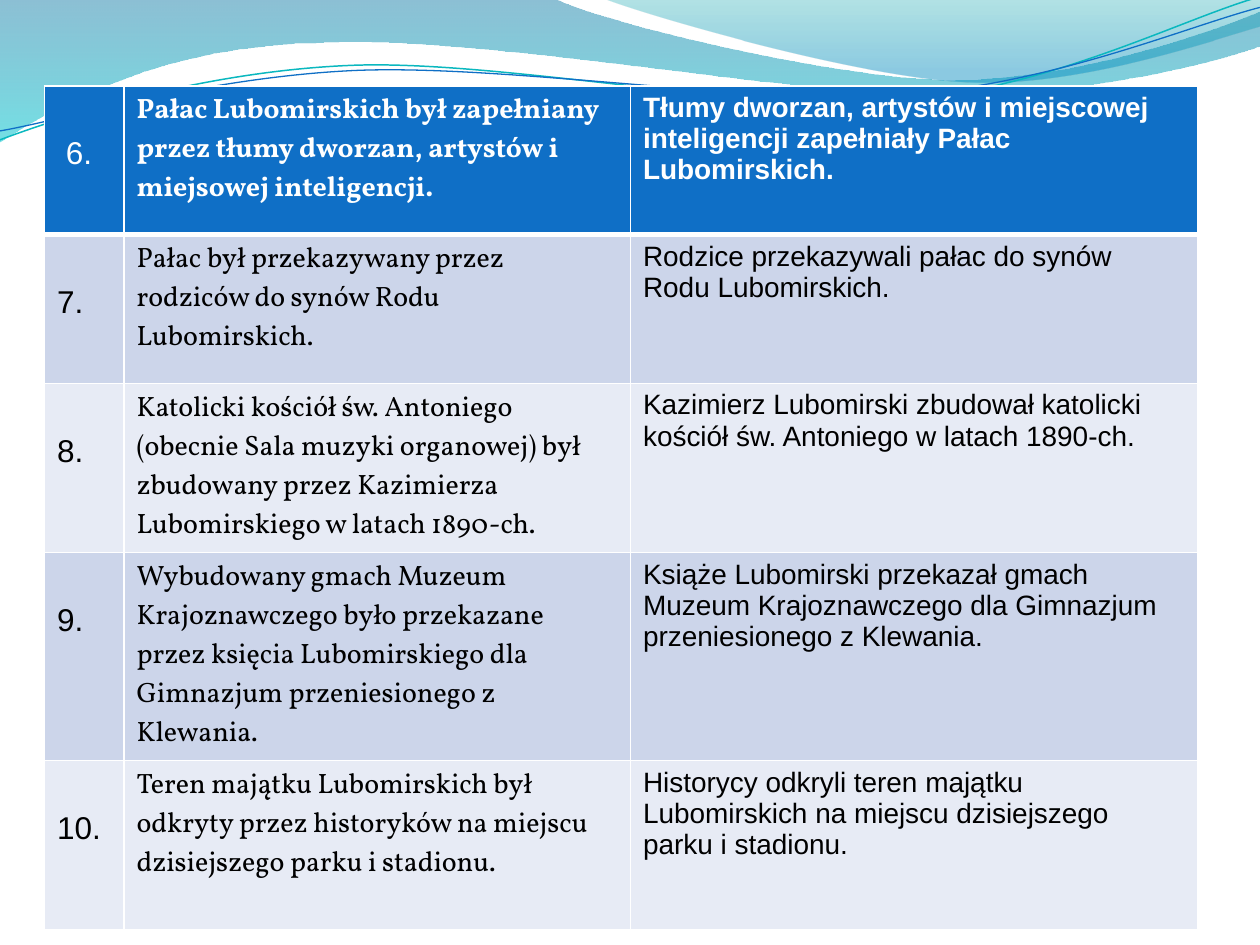
from lxml import etree
from pptx import Presentation
from pptx.dml.color import RGBColor
from pptx.oxml import ns
from pptx.util import Cm, Pt

ROWS = [
    ("6.", "Pałac Lubomirskich był zapełniany przez tłumy dworzan, artystów i miejsowej inteligencji.",
     "Tłumy dworzan, artystów i miejscowej inteligencji zapełniały Pałac Lubomirskich."),
    ("7.", "Pałac był przekazywany przez rodziców do synów Rodu Lubomirskich.",
     "Rodzice przekazywali pałac do synów Rodu Lubomirskich."),
    ("8.", "Katolicki kościół św. Antoniego (obecnie Sala muzyki organowej) był zbudowany "
     "przez Kazimierza Lubomirskiego w latach 1890-ch.",
     "Kazimierz Lubomirski zbudował katolicki kościół św. Antoniego w latach 1890-ch."),
    ("9.", "Wybudowany gmach Muzeum Krajoznawczego było przekazane przez księcia "
     "Lubomirskiego dla Gimnazjum przeniesionego z Klewania.",
     "Książe Lubomirski przekazał gmach Muzeum Krajoznawczego dla Gimnazjum przeniesionego z Klewania."),
    ("10.", "Teren majątku Lubomirskich był odkryty przez historyków na miejscu "
     "dzisiejszego parku i stadionu.",
     "Historycy odkryli teren majątku Lubomirskich na miejscu dzisiejszego parku i stadionu."),
]
ROW_HEIGHTS = [3, 3, 3.41, 4.19, 3.41]
# width, font, size
COLUMNS = [(1.6, "Arial", 18), (10.21, "Vollkorn", 16), (11.43, "Arial", 16)]
HEADER, BANDS = "0F6FC6", ("E7EBF5", "CCD5EA")

# Outlines in cm: two numbers are a straight step, six are a Bézier step.
WAVES = [
    ([(0, -0.03), (11.18, -0.03), (12.09, 0.43, 16.87, 1.6, 19.25, 1.6),
      (21.67, 1.6, 24.33, 0.66, 25.4, 0.23), (25.43, 0.91),
      (24.97, 1.12, 22.1, 1.93, 18.95, 1.91), (15.8, 1.91, 9.7, 0.71, 6.53, 0.86),
      (3.28, 0.89, 1.17, 2.11, -0.03, 2.87)],
     [(0, "0074A1", 45), (1, "00C6CF", 55)]),
    ([(12.17, -0.03), (12.93, 0.28, 17.32, 1.57, 19.53, 1.65),
      (21.74, 1.75, 24.41, 0.81, 25.4, 0.53), (25.4, 0)],
     [(0, "00A1A9", 30), (0.8, "008BBF", 45)]),
]
STROKES = [
    ([(0, 2.82), (1.22, 2.36, 4.01, 1.45, 7.04, 1.32),
      (10.03, 1.19, 15.06, 2.26, 18.11, 2.03), (21.16, 1.8, 23.83, 0.38, 25.35, -0.05)],
     "0AB8BF", 0.85),
    ([(0, 2.64), (1.19, 2.44, 4.17, 1.55, 7.19, 1.42),
      (10.24, 1.3, 15.16, 2.11, 18.21, 1.91), (21.23, 1.7, 23.93, 0.53, 25.4, 0.15)],
     "0F6FC6", 0.75),
]


def rgb(value):
    return RGBColor.from_string(value)


def add_outline(s, steps, close):
    """Draw the steps as a freeform, joining the points of each Bézier step."""
    points = [(Cm(step[i]), Cm(step[i + 1])) for step in steps for i in range(0, len(step), 2)]
    builder = s.shapes.build_freeform(*points[0])
    builder.add_line_segments(points[1:], close=close)
    sp = builder.convert_to_shape()
    sp.shadow.inherit = False
    lines = iter(list(sp._element.iter(ns.qn("a:lnTo"))))
    for step in steps[1:]:
        first = next(lines)
        if len(step) == 6:
            first.tag = ns.qn("a:cubicBezTo")
            for line in (next(lines), next(lines)):
                first.append(line[0])
                line.getparent().remove(line)
    return sp


def add_wave(s, steps, stops):
    sp = add_outline(s, steps, True)
    sp.line.fill.background()
    sp.fill.gradient()
    sp.fill.gradient_angle = 270
    for stop, (position, color, _) in zip(sp.fill.gradient_stops, stops):
        stop.position = position
        stop.color.rgb = rgb(color)
    colors = sp.fill._xPr.iter(ns.qn("a:srgbClr"))
    for node, (_, _, opacity) in zip(colors, stops):
        etree.SubElement(node, ns.qn("a:alpha"), val=str(opacity * 1000))


def add_stroke(s, steps, color, width):
    sp = add_outline(s, steps, False)
    sp.fill.background()
    sp.line.color.rgb = rgb(color)
    sp.line.width = Pt(width)


def set_borders(cell, widths):
    """Give the cell white borders; widths are points by side."""
    props = cell._tc.get_or_add_tcPr()
    for i, (side, width) in enumerate(widths.items()):
        ln = etree.Element(ns.qn(f"a:ln{side}"), w=str(Pt(width)))
        fill = etree.SubElement(ln, ns.qn("a:solidFill"))
        etree.SubElement(fill, ns.qn("a:srgbClr"), val="FFFFFF")
        props.insert(i, ln)


def add_sentence_table(s):
    width = sum(column[0] for column in COLUMNS)
    table = s.shapes.add_table(len(ROWS), len(COLUMNS), Cm(0.9), Cm(1.73),
                               Cm(width), Cm(sum(ROW_HEIGHTS))).table
    for column, (width, _, _) in zip(table.columns, COLUMNS):
        column.width = Cm(width)
    for i, (row, height) in enumerate(zip(ROWS, ROW_HEIGHTS)):
        table.rows[i].height = Cm(height)
        for j, (content, (_, font, size)) in enumerate(zip(row, COLUMNS)):
            cell = table.cell(i, j)
            cell.text = content
            cell.fill.solid()
            cell.fill.fore_color.rgb = rgb(BANDS[i % 2] if i else HEADER)
            if j == 0:
                cell.margin_top = Cm(1.01)
                cell.margin_left = Cm(0.25 if i else 0.43)
                cell.margin_right = Cm(0.1)
            f = cell.text_frame.paragraphs[0].runs[0].font
            f.name, f.size = font, Pt(size)
            f.bold = i == 0 and j > 0
            f.color.rgb = rgb("000000" if i else "FFFFFF")
            set_borders(cell, {"L": 1, "R": 1, "T": 3 if i == 1 else 1, "B": 1 if i else 3})


def main():
    prs = Presentation()
    prs.slide_width, prs.slide_height = Cm(25.4), Cm(19.05)
    s = prs.slides.add_slide(prs.slide_layouts[6])
    for wave in WAVES:
        add_wave(s, *wave)
    for stroke in STROKES:
        add_stroke(s, *stroke)
    add_sentence_table(s)
    prs.save("out.pptx")


if __name__ == "__main__":
    main()
